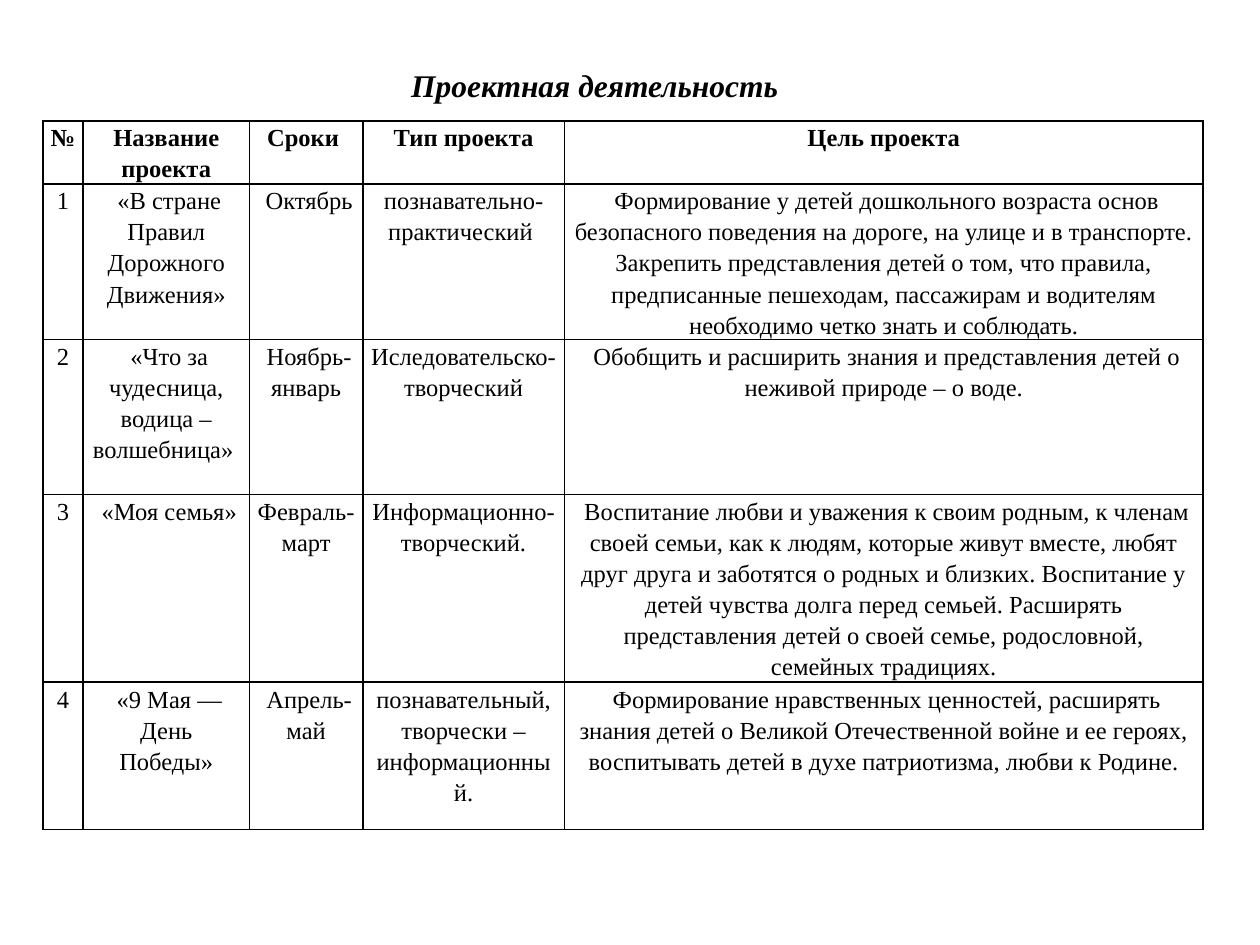
from lxml import etree
from pptx import Presentation
from pptx.dml.color import RGBColor
from pptx.enum.text import MSO_ANCHOR, PP_ALIGN
from pptx.oxml.ns import qn
from pptx.util import Inches, Pt

CENTER = PP_ALIGN.CENTER
TOP = MSO_ANCHOR.TOP
COLORS = {"text": "000000", "border": "000000", "background": "FFFFFF"}
FONT = "Times New Roman"
COL_WIDTHS = [0.32, 1.32, 0.9, 1.6, 5.07]
ROW_HEIGHTS = [0.5, 1.23, 1.23, 1.49, 1.17]
ROWS = [
    ["№", "Название проекта", "Сроки ", "Тип проекта", "Цель проекта"],
    ["1", " «В стране Правил Дорожного Движения»", " Октябрь",
     "познавательно-практический ",
     " Формирование у детей дошкольного возраста основ безопасного поведения "
     "на дороге, на улице и в транспорте. Закрепить представления детей о том, "
     "что правила, предписанные пешеходам, пассажирам и водителям необходимо "
     "четко знать и соблюдать."],
    ["2", " «Что за чудесница, водица – волшебница» ", " Ноябрь-январь",
     "Иследовательско-творческий",
     " Обобщить и расширить знания и представления детей о неживой природе – о воде."],
    ["3", " «Моя семья»", "Февраль-март", "Информационно-творческий.",
     " Воспитание любви и уважения к своим родным, к членам своей семьи, как к "
     "людям, которые живут вместе, любят друг друга и заботятся о родных и "
     "близких. Воспитание у детей чувства долга перед семьей. Расширять "
     "представления детей о своей семье, родословной, семейных традициях."],
    ["4", " «9 Мая — День Победы»", " Апрель-май",
     "познавательный, творчески – информационный.",
     " Формирование нравственных ценностей, расширять знания детей о Великой "
     "Отечественной войне и ее героях, воспитывать детей в духе патриотизма, "
     "любви к Родине."],
]


def write(tf, text, size=14, bold=False, italic=False, spacing=1.0):
    p = tf.paragraphs[0]
    p.alignment = CENTER
    p.line_spacing = spacing
    r = p.add_run()
    r.text = text
    r.font.name = FONT
    r.font.size = Pt(size)
    r.font.bold = bold
    r.font.italic = italic
    r.font.color.rgb = RGBColor.from_string(COLORS["text"])


def set_borders(cell, color, width):
    tcPr = cell._tc.get_or_add_tcPr()
    for i, side in enumerate(("a:lnL", "a:lnR", "a:lnT", "a:lnB")):
        ln = etree.Element(qn(side), w=str(Pt(width)))
        fill = etree.SubElement(ln, qn("a:solidFill"))
        etree.SubElement(fill, qn("a:srgbClr"), val=color)
        tcPr.insert(i, ln)


prs = Presentation()
prs.slide_width = Inches(10)
prs.slide_height = Inches(7.5)
s = prs.slides.add_slide(prs.slide_layouts[5])

title = s.shapes.title
title.left, title.top = Inches(0.95), Inches(0.47)
title.width, title.height = Inches(6.84), Inches(0.71)
tf = title.text_frame
tf.word_wrap = True
tf.vertical_anchor = TOP
tf.margin_left = Inches(0.8)
write(tf, "Проектная деятельность", size=18, bold=True, italic=True)

table = s.shapes.add_table(
    len(ROWS), len(COL_WIDTHS), Inches(0.34), Inches(0.96),
    Inches(sum(COL_WIDTHS)), Inches(sum(ROW_HEIGHTS))).table
for column, width in zip(table.columns, COL_WIDTHS):
    column.width = Inches(width)
for row, height in zip(table.rows, ROW_HEIGHTS):
    row.height = Inches(height)

for i, texts in enumerate(ROWS):
    for j, text in enumerate(texts):
        cell = table.cell(i, j)
        cell.margin_left = cell.margin_right = Inches(0.06)
        cell.margin_top = cell.margin_bottom = 0
        cell.fill.solid()
        cell.fill.fore_color.rgb = RGBColor.from_string(COLORS["background"])
        set_borders(cell, COLORS["border"], 1)
        write(cell.text_frame, text, bold=i == 0, spacing=1.15)

prs.save("out.pptx")
